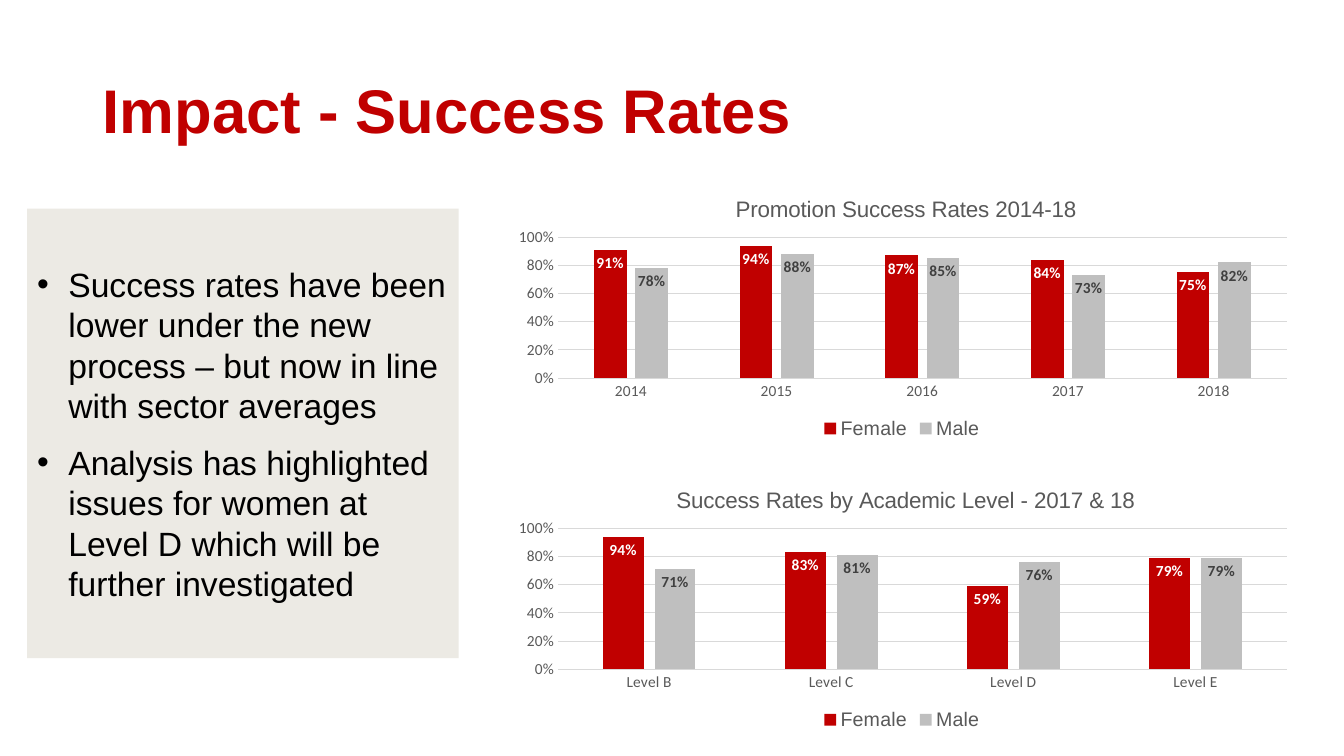
"""Build the slide on promotion success rates with two clustered column charts."""
from lxml.etree import SubElement
from pptx import Presentation
from pptx.chart.data import CategoryChartData
from pptx.dml.color import RGBColor
from pptx.enum.chart import XL_CHART_TYPE, XL_LABEL_POSITION, XL_LEGEND_POSITION, XL_TICK_MARK
from pptx.enum.shapes import MSO_SHAPE
from pptx.enum.text import MSO_ANCHOR, PP_ALIGN
from pptx.oxml.ns import qn
from pptx.util import Inches, Pt

RED, SILVER, GRID, GREY = "C00000", "BFBFBF", "D9D9D9", "595959"

prs = Presentation()
prs.slide_width, prs.slide_height = Inches(13.33), Inches(7.5)


def box(x, y, w, h):
    """Turn percentages of the slide into left, top, width and height."""
    sides = (prs.slide_width, prs.slide_height) * 2
    return [int(side * share / 100) for side, share in zip(sides, (x, y, w, h))]


def style(font, size, color, name="Arial", bold=False):
    """Set the size, colour, typeface and weight of a font."""
    font.size, font.name, font.bold = Pt(size), name, bold
    font.color.rgb = RGBColor.from_string(color)


s = prs.slides.add_slide(prs.slide_layouts[6])

tf = s.shapes.add_textbox(*box(6.9, 5.33, 86.25, 19.33)).text_frame
tf.word_wrap = True
tf.vertical_anchor = MSO_ANCHOR.MIDDLE
p = tf.paragraphs[0]
p.text = "Impact - Success Rates"
p.line_spacing = 0.9
style(p.runs[0].font, 44, RED, bold=True)

sp = s.shapes.add_shape(MSO_SHAPE.RECTANGLE, *box(2.03, 27.6, 32.1, 59.47))
sp.shadow.inherit = False
sp.fill.solid()
sp.fill.fore_color.rgb = RGBColor.from_string("ECEAE4")
sp.line.fill.background()
tf = sp.text_frame
tf.word_wrap = True
tf.vertical_anchor = MSO_ANCHOR.MIDDLE
tf.text = (
    "Success rates have been lower under the new process – but now in line with sector averages\n"
    "Analysis has highlighted issues for women at Level D which will be further investigated"
)
for p in tf.paragraphs:
    p.alignment = PP_ALIGN.LEFT
    p.space_after = Pt(12)
    style(p.runs[0].font, 24, "000000")
    pPr = p._p.get_or_add_pPr()
    pPr.set("marL", str(Inches(0.31)))
    pPr.set("indent", str(-Inches(0.31)))
    SubElement(pPr, qn("a:buFont")).set("typeface", "Arial")
    SubElement(pPr, qn("a:buChar")).set("char", "•")

charts = [
    ("Promotion Success Rates 2014-18", 23.07, 0.287,
     ["2014", "2015", "2016", "2017", "2018"],
     [0.91, 0.94, 0.87, 0.84, 0.75], [0.78, 0.88, 0.85, 0.73, 0.82]),
    ("Success Rates by Academic Level - 2017 & 18", 61.6, 0.213,
     ["Level B", "Level C", "Level D", "Level E"],
     [0.94, 0.83, 0.59, 0.79], [0.71, 0.81, 0.76, 0.79]),
]
for title, top, title_left, categories, female, male in charts:
    data = CategoryChartData(number_format="0%")
    data.categories = categories
    data.add_series("Female", female)
    data.add_series("Male", male)
    chart = s.shapes.add_chart(
        XL_CHART_TYPE.COLUMN_CLUSTERED, *box(37.36, top, 59.5, 35.6), data).chart
    style(chart.font, 11, "000000", "Calibri")

    p = chart.chart_title.text_frame.paragraphs[0]
    p.text = title
    style(p.runs[0].font, 16, GREY)
    chart.has_legend = True
    chart.legend.position = XL_LEGEND_POSITION.BOTTOM
    chart.legend.include_in_layout = False
    style(chart.legend.font, 14, GREY)

    for axis in (chart.category_axis, chart.value_axis):
        axis.major_tick_mark = axis.minor_tick_mark = XL_TICK_MARK.NONE
        style(axis.tick_labels.font, 11, GREY, "Calibri")
    values = chart.value_axis
    values.minimum_scale, values.maximum_scale, values.major_unit = 0, 1, 0.2
    values.tick_labels.number_format = "0%"
    values.tick_labels.number_format_is_linked = False
    values.format.line.fill.background()
    for line in (chart.category_axis.format.line, values.major_gridlines.format.line):
        line.color.rgb = RGBColor.from_string(GRID)
        line.width = Pt(0.75)

    plot = chart.plots[0]
    plot.vary_by_categories = False
    plot.gap_width, plot.overlap = 219, -27
    for series, fill, ink in zip(plot.series, (RED, SILVER), ("FFFFFF", "404040")):
        series.format.fill.solid()
        series.format.fill.fore_color.rgb = RGBColor.from_string(fill)
        labels = series.data_labels
        labels.show_value = True
        labels.position = XL_LABEL_POSITION.INSIDE_END
        labels.number_format = "0%"
        labels.number_format_is_linked = False
        style(labels.font, 11, ink, "Calibri", True)

    area = chart._chartSpace.chart.plotArea
    heading = chart.chart_title._element
    for part, index, frame in (
        (area, 0, {"x": 0.07, "y": 0.233, "w": 0.911, "h": 0.524}),
        (heading, 1, {"x": title_left, "y": 0.06}),
    ):
        for old in part.findall(qn("c:layout")):
            part.remove(old)
        layout = SubElement(part, qn("c:layout"))
        part.insert(index, layout)
        manual = SubElement(layout, qn("c:manualLayout"))
        if part is area:
            SubElement(manual, qn("c:layoutTarget")).set("val", "inner")
        for side in ("x", "y"):
            SubElement(manual, qn(f"c:{side}Mode")).set("val", "edge")
        for side, share in frame.items():
            SubElement(manual, qn(f"c:{side}")).set("val", str(share))

prs.save("out.pptx")
